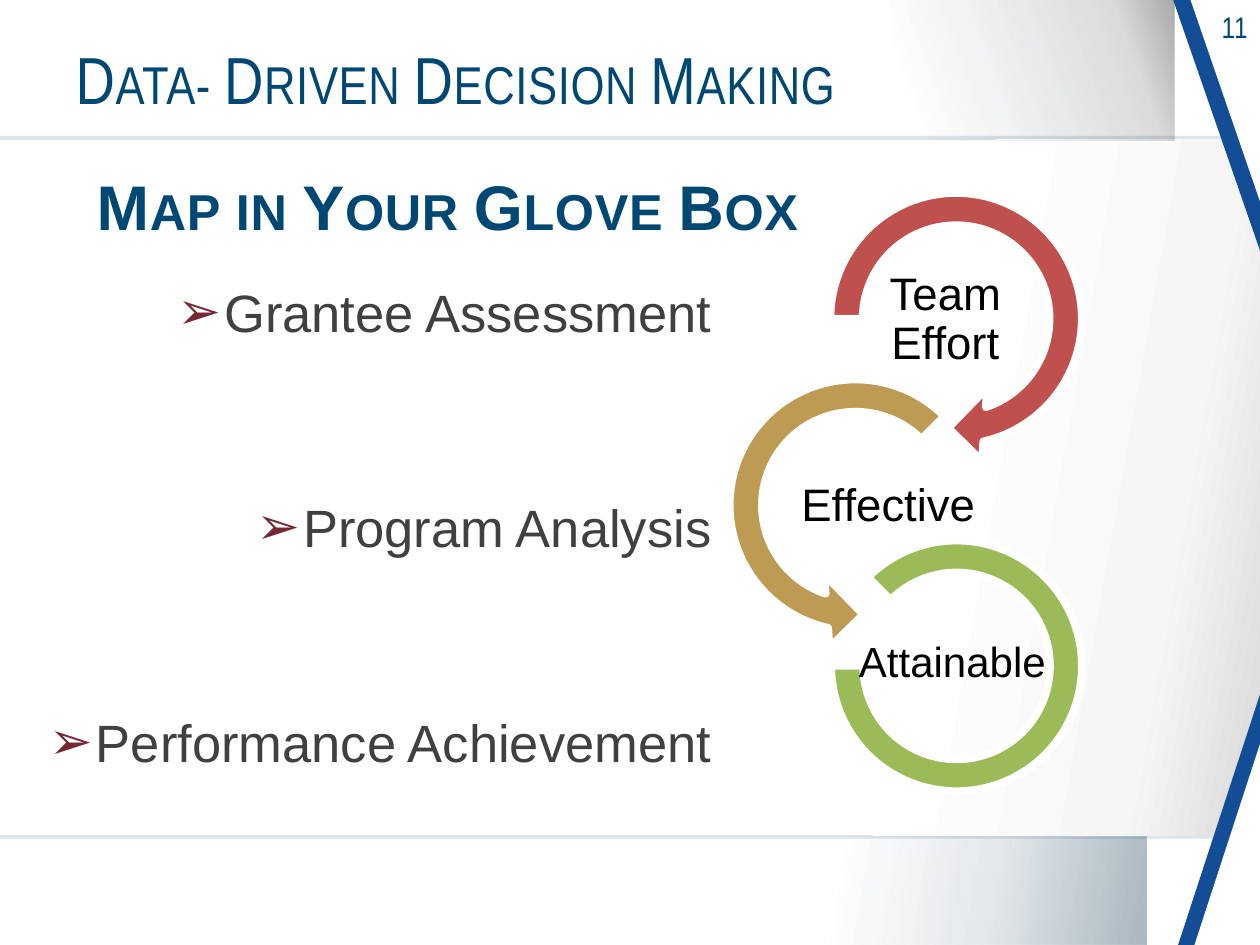
from lxml import etree
from pptx import Presentation
from pptx.dml.color import RGBColor
from pptx.enum.shapes import MSO_SHAPE
from pptx.enum.text import MSO_ANCHOR, MSO_AUTO_SIZE, PP_ALIGN
from pptx.oxml.ns import qn
from pptx.util import Cm, Pt

RECT, TRIANGLE = MSO_SHAPE.RECTANGLE, MSO_SHAPE.ISOSCELES_TRIANGLE
ARROW, LEFT_ARROW = MSO_SHAPE.CIRCULAR_ARROW, MSO_SHAPE.LEFT_CIRCULAR_ARROW
BLOCK_ARC = MSO_SHAPE.BLOCK_ARC
LEFT, CENTER, RIGHT = PP_ALIGN.LEFT, PP_ALIGN.CENTER, PP_ALIGN.RIGHT
TOP, MIDDLE = MSO_ANCHOR.TOP, MSO_ANCHOR.MIDDLE
NO_FIT = MSO_AUTO_SIZE.NONE

NAVY, BLUE, WHITE, BLACK = "004874", "124D95", "FFFFFF", "000000"
SHADE = "002C47"


def rgb(color):
    return RGBColor.from_string(color)


def add_alpha(clr, percent):
    etree.SubElement(clr, qn("a:alpha"), val=str(percent * 1000))


def add_shape(s, kind, box, color=None, adj=()):
    sp = s.shapes.add_shape(kind, *map(Cm, box))
    sp.shadow.inherit = False
    sp.line.fill.background()
    for i, value in enumerate(adj):
        sp.adjustments[i] = value
    if color:
        sp.fill.solid()
        sp.fill.fore_color.rgb = rgb(color)
    return sp


def add_gradient_panel(s, box, angle, stops):
    """Stops are (position, colour, opacity) in percent; the angle runs clockwise."""
    sp = add_shape(s, RECT, box)
    sp.fill.gradient()
    sp.fill.gradient_angle = 360 - angle
    gs_list = next(sp._element.spPr.iter(qn("a:gsLst")))
    for gs in list(gs_list):
        gs_list.remove(gs)
    for position, color, opacity in stops:
        gs = etree.SubElement(gs_list, qn("a:gs"), pos=str(position * 1000))
        clr = etree.SubElement(gs, qn("a:srgbClr"), val=color)
        if opacity < 100:
            add_alpha(clr, opacity)


def format_paragraph(p, size, color, font="Arial", align=LEFT, bold=False):
    p.alignment = align
    for r in p.runs:
        r.font.name = font
        r.font.size = Pt(size)
        r.font.bold = bold
        r.font.color.rgb = rgb(color)


def add_text(s, text, box, anchor=MIDDLE, inset=None, line_spacing=None, **style):
    sp = s.shapes.add_textbox(*map(Cm, box))
    tf = sp.text_frame
    tf.word_wrap = True
    tf.vertical_anchor = anchor
    if inset is not None:
        tf.margin_left = tf.margin_right = tf.margin_top = tf.margin_bottom = Cm(inset)
    tf.text = text
    p = tf.paragraphs[0]
    if line_spacing:
        p.line_spacing = line_spacing
    format_paragraph(p, **style)
    return p


def set_character_style(p, small_caps=False):
    for r in p.runs:
        r_pr = r.font._element
        r_pr.set("spc", "40")
        if small_caps:
            r_pr.set("cap", "small")


def place(s, sp, box):
    """Position a placeholder and bring it to the front."""
    sp.left, sp.top, sp.width, sp.height = map(Cm, box)
    s.shapes._spTree.append(sp._element)
    tf = sp.text_frame
    tf.word_wrap = True
    tf.auto_size = NO_FIT
    return tf


def add_bullet(p, char, color):
    p_pr = p._p.get_or_add_pPr()
    p_pr.set("marL", str(Cm(0.95)))
    p_pr.set("indent", str(-Cm(0.95)))
    bu_clr = etree.SubElement(p_pr, qn("a:buClr"))
    etree.SubElement(bu_clr, qn("a:srgbClr"), val=color)
    etree.SubElement(p_pr, qn("a:buChar"), char=char)


def add_background(s):
    band = add_shape(s, RECT, (0, 2.74, 25.4, 14.17), "275A99")
    add_alpha(next(band._element.spPr.iter(qn("a:srgbClr"))), 16)
    add_gradient_panel(s, (0, 2.82, 25.4, 14.02), 10,
                       [(0, WHITE, 100), (72, WHITE, 100),
                        (90, "F6F6F6", 100), (100, "D9D9D9", 100)])
    add_gradient_panel(s, (16.33, 16.87, 6.78, 2.18), 10,
                       [(10, SHADE, 0), (56, SHADE, 11), (100, SHADE, 34)])
    add_gradient_panel(s, (17.98, 0, 5.69, 2.84), 340,
                       [(10, SHADE, 0), (81, BLACK, 14), (100, BLACK, 34)])
    for box, color in [((23.65, 0, 1.75, 5.05), BLUE), ((24, 0, 1.4, 4.06), WHITE)]:
        corner = add_shape(s, TRIANGLE, box, color, [1])
        corner._element.spPr.xfrm.set("flipV", "1")
    for box, color in [((23.75, 14, 1.65, 5.05), BLUE), ((24.08, 15, 1.32, 4.05), WHITE)]:
        add_shape(s, TRIANGLE, box, color, [1])


def add_title(s):
    tf = place(s, s.shapes.title, (1.27, 0.61, 19.2, 2.16))
    tf.text = "Data- Driven Decision Making"
    tf.vertical_anchor = MIDDLE
    p = tf.paragraphs[0]
    p.line_spacing = 0.85
    format_paragraph(p, 38, NAVY, "Arial Narrow")
    set_character_style(p, small_caps=True)


def add_topics(s):
    tf = place(s, s.placeholders[1], (0, 5.51, 14.6, 12.93))
    tf.vertical_anchor = TOP
    topics = ["Grantee Assessment", "Program Analysis", "Performance Achievement"]
    for i, topic in enumerate(topics):
        p = tf.add_paragraph() if i else tf.paragraphs[0]
        p.text = topic
        p.space_before = Pt(81 if i else 0)
        p.space_after = Pt(6)
        add_bullet(p, "➢", "752832")
        format_paragraph(p, 30, "404040", align=RIGHT)


def add_cycle(s):
    steps = [
        (ARROW, (16.33, 3.48, 5.89, 5.89), "C0504D", (0.11, 11.42, 45, 108, 0.125),
         "Team Effort", (17.42, 5.64, 3.28, 1.63), 26),
        (LEFT_ARROW, (14.3, 7.24, 5.89, 5.89), "BD9B53", (0.11, 11.42, 63, 189, 0.125),
         "Effective", (15.47, 9.4, 4.88, 1.63), 26),
        (BLOCK_ARC, (16.76, 10.9, 5.05, 5.05), "9BBB59", (135, 108, 0.127),
         "Attainable", (16.33, 12.57, 5.74, 1.63), 24),
    ]
    for kind, box, color, adj, label, label_box, size in steps:
        sp = add_shape(s, kind, box, color, adj)
        sp.line.color.rgb = rgb(WHITE)
        sp.line.width = Pt(4.33)
        add_text(s, label, label_box, inset=0.05, line_spacing=0.9,
                 size=size, color=BLACK, align=CENTER)


def main():
    prs = Presentation()
    prs.slide_width, prs.slide_height = Cm(25.4), Cm(19.05)
    s = prs.slides.add_slide(prs.slide_layouts[1])
    add_background(s)
    number = add_text(s, "11", (23.37, 0.05, 2.03, 0.99), anchor=TOP,
                      size=17, color=NAVY, font="Arial Narrow", align=RIGHT)
    set_character_style(number)
    add_title(s)
    add_topics(s)
    add_cycle(s)
    heading = add_text(s, "Map in Your Glove Box", (1.7, 3.18, 16.66, 2.16),
                       line_spacing=0.85, size=36, color=NAVY, bold=True)
    set_character_style(heading, small_caps=True)
    prs.save("out.pptx")


if __name__ == "__main__":
    main()
